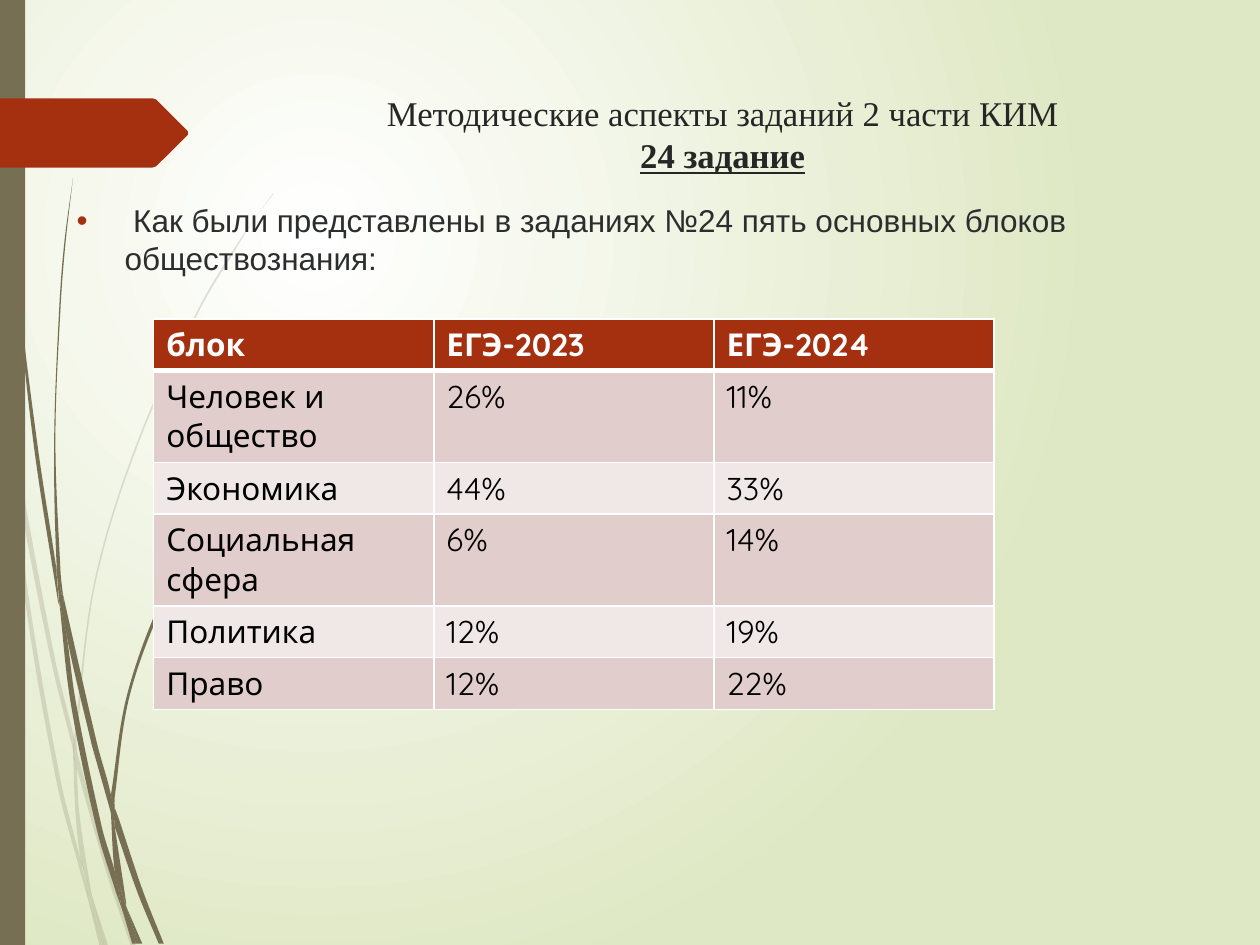
"""Build the slide on exam task 24: a title, a lead line and a table of shares by block."""
from math import dist

from lxml.etree import SubElement
from pptx import Presentation
from pptx.dml.color import RGBColor
from pptx.enum.shapes import MSO_SHAPE
from pptx.enum.text import MSO_ANCHOR, PP_ALIGN
from pptx.oxml.ns import qn
from pptx.util import Pt

PX = 9144
OLIVE, RUST, WHITE, BLACK = "766F54", "A53010", "FFFFFF", "000000"
BANDS = ("E1CDCC", "F0E8E7")
ROWS = (
    (41, "блок", "ЕГЭ-2023", "ЕГЭ-2024"),
    (73, "Человек и общество", "26%", "11%"),
    (41, "Экономика", "44%", "33%"),
    (73, "Социальная сфера", "6%", "14%"),
    (41, "Политика", "12%", "19%"),
    (41, "Право", "12%", "22%"),
)
PALE_BLADES = (
    ([(8, 350), (6, 322), (0, 282)], [(0, 299), (7, 344), (8, 350)]),
    ([(10, 345), (43, 520), (59, 586)], [(59, 599), (40, 522), (12, 376), (10, 345)]),
    ([(61, 596), (64, 607), (88, 692), (108, 751)], [(104, 751), (85, 694), (61, 610)]),
    ([(73, 711), (86, 751)], [(83, 751), (73, 711)]),
    ([(8, 350), (12, 376), (22, 469), (48, 619), (64, 683), (69, 707), (70, 714)],
     [(64, 693), (45, 621), (19, 470), (8, 350)]),
    ([(58, 599), (61, 608), (61, 610), (63, 646), (72, 706), (73, 711)],
     [(67, 692), (64, 683), (60, 646), (58, 599)]),
    ([(59, 586), (59, 584), (75, 461), (110, 348), (158, 244), (186, 197), (201, 175), (217, 153)],
     [(217, 154), (201, 175), (187, 198), (159, 245), (111, 349), (76, 462), (61, 584), (61, 596)]),
    ([(70, 714), (82, 751)], [(79, 751), (70, 714)]),
    ([(59, 586), (61, 596), (61, 610)], [(61, 608), (58, 599), (59, 586)]),
    ([(65, 683), (67, 692), (73, 711), (83, 751)], [(82, 751), (70, 714), (69, 707), (65, 683)]),
)
DARK_BLADES = (
    ([(2, 0), (3, 48), (5, 110), (14, 233), (27, 355), (46, 477), (47, 481)],
     [(45, 457), (45, 453), (30, 355), (15, 232), (6, 109), (4, 48), (3, 0)]),
    ([(50, 472), (77, 590), (88, 631), (88, 645)], [(73, 592), (53, 505), (50, 472)]),
    ([(91, 641), (94, 649), (113, 706), (130, 749)], [(126, 749), (109, 708), (91, 656)]),
    ([(47, 477), (53, 505), (60, 556), (81, 657), (91, 691), (96, 717), (97, 722)],
     [(92, 708), (77, 659), (56, 557), (47, 477)]),
    ([(58, 141), (52, 193), (48, 245), (44, 349), (48, 453), (50, 472)],
     [(49, 472), (45, 449), (43, 349), (47, 245), (51, 193), (58, 141)]),
    ([(100, 719), (113, 749)], [(110, 749), (100, 719)]),
    ([(45, 449), (49, 472), (50, 472), (53, 505)], [(47, 477), (45, 453), (45, 449)]),
    ([(216, 344), (203, 359), (191, 374), (169, 406), (131, 476), (103, 552), (91, 633), (91, 641)],
     [(88, 631), (101, 551), (129, 474), (168, 405), (191, 373), (203, 358), (215, 344)]),
    ([(97, 722), (108, 749)], [(105, 749), (97, 722)]),
    ([(88, 645), (90, 651), (91, 656), (100, 716), (100, 719)], [(96, 706), (91, 691), (88, 645)]),
    ([(88, 631), (91, 641), (91, 656)], [(90, 651), (88, 645), (88, 633)]),
    ([(91, 691), (96, 706), (100, 719), (110, 749)], [(108, 749), (97, 722), (96, 717), (91, 691)]),
)
ARROW = [(0, 78), (121, 78), (124, 79), (149, 104), (149, 107), (124, 132), (121, 133), (0, 133)]


def color(value):
    """Turn a hex string into a colour."""
    return RGBColor.from_string(value)


def paint(shape, fill, alpha=None):
    """Give a shape a flat fill, optionally see-through, with no line or shadow."""
    shape.shadow.inherit = False
    shape.fill.solid()
    shape.fill.fore_color.rgb = color(fill)
    shape.line.fill.background()
    if alpha is not None:
        srgb = shape.element.spPr.find(qn("a:solidFill")).find(qn("a:srgbClr"))
        SubElement(srgb, qn("a:alpha"), val=str(alpha * 1000))


def add_outline(slide, points, fill, alpha=None):
    """Draw a closed, filled outline and return it."""
    corners = [(x * PX, y * PX) for x, y in points]
    builder = slide.shapes.build_freeform(*corners[0])
    builder.add_line_segments(corners[1:], close=True)
    shape = builder.convert_to_shape()
    paint(shape, fill, alpha)
    return shape


def control_points(before, start, end, after):
    """Find the two handles of a smooth curve from start to end."""
    handles = []
    for origin, tail, head, sign in ((start, before, end, 1), (end, start, after, -1)):
        reach = sign * dist(start, end) / 3 / (dist(tail, head) or 1)
        handles.append([o + (h - t) * reach for o, t, h in zip(origin, tail, head)])
    return handles


def add_blade(slide, outer, inner, alpha):
    """Draw a grass blade whose two edges are smooth curves."""
    shape = add_outline(slide, outer + inner, OLIVE, alpha)
    left, top = (min(values) for values in zip(*outer, *inner))
    lines = list(shape.element.iter(qn("a:lnTo")))
    for edge, first in ((outer, 0), (inner, len(outer))):
        padded = [edge[0], *edge, edge[-1]]
        for line, *anchors in zip(lines[first:], padded, padded[1:], padded[2:], padded[3:]):
            line.tag = qn("a:cubicBezTo")
            for index, (x, y) in enumerate(control_points(*anchors)):
                handle = line.makeelement(qn("a:pt"), x=str(round((x - left) * PX)), y=str(round((y - top) * PX)))
                line.insert(index, handle)


def write_text(paragraph, text, size=18, font="Arial", fill=BLACK, bold=False, underline=False,
               align=PP_ALIGN.LEFT, spacing=None):
    """Put formatted text in a paragraph."""
    run = paragraph.add_run()
    run.text = text
    run.font.size, run.font.name = Pt(size), font
    run.font.bold, run.font.underline = bold, underline
    run.font.color.rgb = color(fill)
    paragraph.alignment = align
    if spacing:
        paragraph.line_spacing = Pt(spacing)


def add_text_frame(slide, left, top, width, height):
    """Add a wrapping text box and return its frame."""
    frame = slide.shapes.add_textbox(left * PX, top * PX, width * PX, height * PX).text_frame
    frame.word_wrap = True
    frame.vertical_anchor = MSO_ANCHOR.TOP
    return frame


def add_bullet(paragraph, indent, fill):
    """Hang a coloured bullet before a paragraph."""
    properties = paragraph._p.get_or_add_pPr()
    properties.set("marL", str(indent * PX))
    properties.set("indent", str(-indent * PX))
    SubElement(SubElement(properties, qn("a:buClr")), qn("a:srgbClr"), val=fill)
    SubElement(properties, qn("a:buFont"), typeface="Arial")
    SubElement(properties, qn("a:buChar"), char="•")


def style_cell(cell, fill, bottom):
    """Fill a cell and rule its sides in white."""
    properties = cell._tc.get_or_add_tcPr()
    for side, points in (("L", 1), ("R", 1), ("T", 1), ("B", bottom)):
        line = SubElement(properties, qn(f"a:ln{side}"), w=str(Pt(points)))
        SubElement(SubElement(line, qn("a:solidFill")), qn("a:srgbClr"), val=WHITE)
    cell.fill.solid()
    cell.fill.fore_color.rgb = color(fill)


def add_share_table(slide, left, top, width):
    """Add the table of shares with a header and banded rows."""
    height = sum(row[0] for row in ROWS)
    table = slide.shapes.add_table(len(ROWS), len(ROWS[0]) - 1, left * PX, top * PX, width * PX,
                                   height * PX).table
    for row, (row_height, *texts) in enumerate(ROWS):
        header = row == 0
        table.rows[row].height = row_height * PX
        for column, text in enumerate(texts):
            cell = table.cell(row, column)
            style_cell(cell, RUST if header else BANDS[(row - 1) % 2], 3 if header else 1)
            write_text(cell.text_frame.paragraphs[0], text, font="Quicksand",
                       fill=WHITE if header else BLACK, bold=header)


def set_background(slide):
    """Spread a round gradient from the upper left."""
    fill = slide.background.fill
    fill.gradient()
    for stop, value, position in zip(fill.gradient_stops, (WHITE, "DFE8C4"), (0, 1)):
        stop.color.rgb = color(value)
        stop.position = position
    gradient = slide.element.find(f".//{qn('a:gradFill')}")
    circle = SubElement(gradient, qn("a:path"), path="circle")
    SubElement(circle, qn("a:fillToRect"), l="50000", t="50000", r="100000", b="100000")
    gradient.replace(gradient.find(qn("a:lin")), circle)


def main():
    """Build and save the slide."""
    presentation = Presentation()
    presentation.slide_width, presentation.slide_height = 1000 * PX, 750 * PX
    slide = presentation.slides.add_slide(presentation.slide_layouts[6])
    set_background(slide)
    for blades, alpha in ((PALE_BLADES, 20), (DARK_BLADES, None)):
        for outer, inner in blades:
            add_blade(slide, outer, inner, alpha)
    paint(slide.shapes.add_shape(MSO_SHAPE.RECTANGLE, 0, 0, 20 * PX, 750 * PX), OLIVE)
    add_outline(slide, ARROW, RUST)

    title = add_text_frame(slide, 213, 68, 721, 86).paragraphs[0]
    title_format = dict(size=19.8, font="Times New Roman", fill="262626", align=PP_ALIGN.CENTER, spacing=24)
    write_text(title, "Методические аспекты заданий 2 части КИМ", **title_format)
    title.add_line_break()
    write_text(title, "24 задание", bold=True, underline=True, **title_format)

    lead = add_text_frame(slide, 51, 155, 921, 492).paragraphs[0]
    write_text(lead, " Как были представлены в заданиях №24 пять основных блоков обществознания:",
               fill="2C2D2E", spacing=21.5)
    add_bullet(lead, 38, RUST)
    add_share_table(slide, 122, 253, 667)
    presentation.save("out.pptx")


if __name__ == "__main__":
    main()
